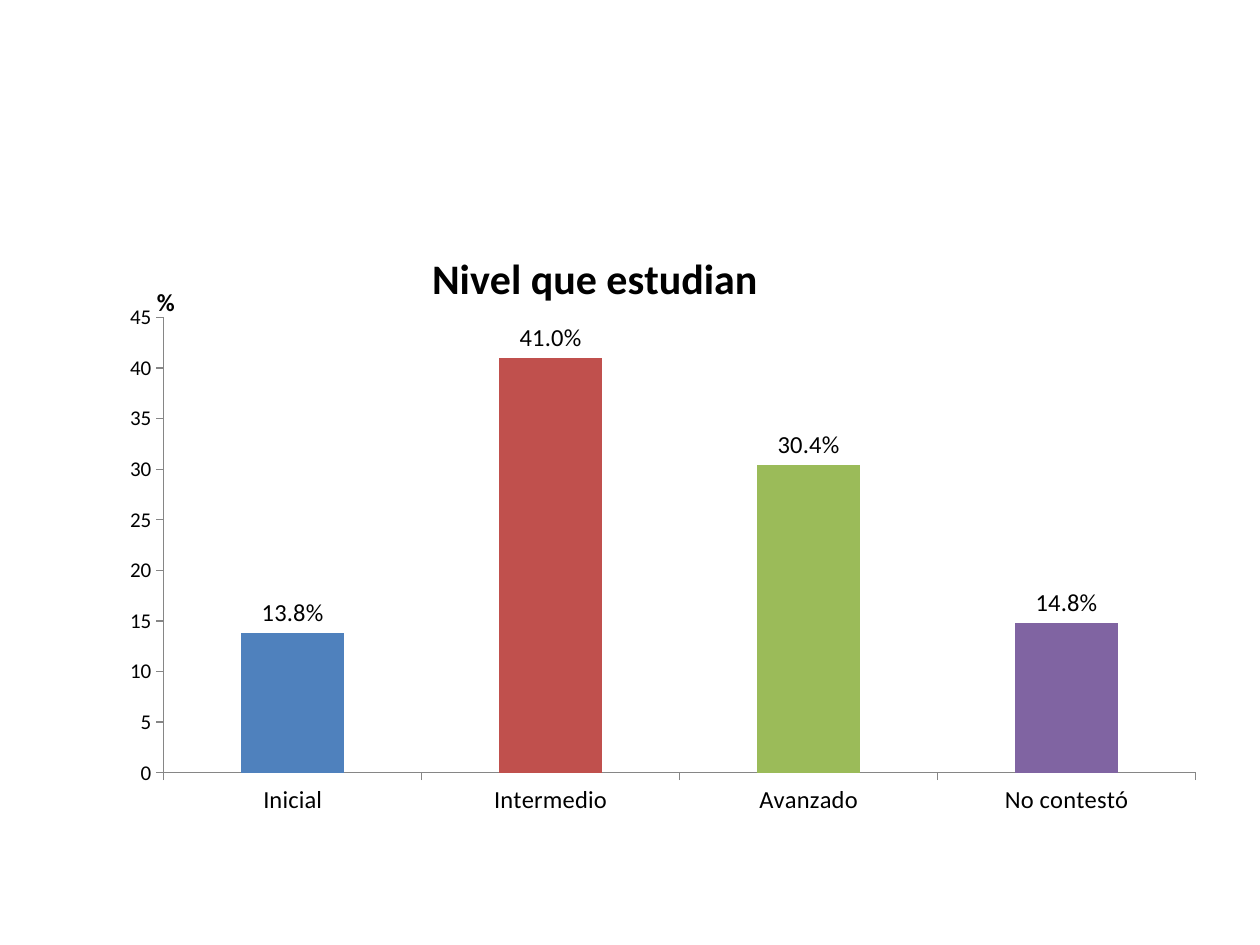
from lxml import etree
from pptx import Presentation
from pptx.chart.data import CategoryChartData
from pptx.dml.color import RGBColor
from pptx.enum.chart import XL_CHART_TYPE, XL_LABEL_POSITION, XL_TICK_MARK
from pptx.oxml.ns import qn
from pptx.util import Inches, Pt

COLUMN = XL_CHART_TYPE.COLUMN_CLUSTERED
OUTSIDE_END = XL_LABEL_POSITION.OUTSIDE_END
TICK_OUT = XL_TICK_MARK.OUTSIDE
TICK_NONE = XL_TICK_MARK.NONE

LEVELS = {
    "Inicial": (13.8, "4F81BD"),
    "Intermedio": (41.0, "C0504D"),
    "Avanzado": (30.4, "9BBB59"),
    "No contestó": (14.8, "8064A2"),
}


def rgb(value):
    return RGBColor.from_string(value)


def set_layout(parent, index, **values):
    for old in parent.findall(qn("c:layout")):
        parent.remove(old)
    layout = etree.Element(qn("c:layout"))
    manual = etree.SubElement(layout, qn("c:manualLayout"))
    for tag, value in values.items():
        etree.SubElement(manual, qn(f"c:{tag}")).set("val", str(value))
    parent.insert(index, layout)


class Deck:
    font = "Calibri"
    ink = "000000"
    axis_line = "868686"

    def __init__(self, width, height):
        self.prs = Presentation()
        self.prs.slide_width = Inches(width)
        self.prs.slide_height = Inches(height)
        self.s = self.prs.slides.add_slide(self.prs.slide_layouts[6])

    def style(self, font, size, bold=False):
        values = {"name": self.font, "size": Pt(size), "bold": bold}
        for name, value in values.items():
            setattr(font, name, value)
        font.color.rgb = rgb(self.ink)

    def title(self, holder, text, size, x, y):
        tf = holder.text_frame
        tf.text = text
        self.style(tf.paragraphs[0].runs[0].font, size, True)
        tf._txBody.bodyPr.set("rot", "0")
        set_layout(holder._element, 1, xMode="edge", yMode="edge", x=x, y=y)

    def axis(self, axis, size, **values):
        defaults = {"has_major_gridlines": False, "major_tick_mark": TICK_OUT,
                    "minor_tick_mark": TICK_NONE}
        for name, value in {**defaults, **values}.items():
            setattr(axis, name, value)
        self.style(axis.tick_labels.font, size)
        axis.format.line.color.rgb = rgb(self.axis_line)
        axis.format.line.width = Pt(0.75)

    def column_chart(self, levels, left, top, width, height):
        data = CategoryChartData(number_format="0.0")
        data.categories = list(levels)
        data.add_series("Series 1", [value for value, _ in levels.values()])
        w, h = self.prs.slide_width, self.prs.slide_height
        box = [int(v) for v in (left * w, top * h, width * w, height * h)]
        chart = self.s.shapes.add_chart(COLUMN, *box, data).chart
        chart.has_legend = False
        self.style(chart.font, 10)
        plot = chart.plots[0]
        plot.gap_width = 150
        plot.vary_by_categories = False
        set_layout(plot._element.getparent(), 0, layoutTarget="inner",
                   xMode="edge", yMode="edge", x=0.08, y=0.15, w=0.91, h=0.73)
        for i, (_, color) in enumerate(levels.values()):
            fill = plot.series[0].points[i].format.fill
            fill.solid()
            fill.fore_color.rgb = rgb(color)
        plot.has_data_labels = True
        labels = plot.data_labels
        values = {"show_value": True, "number_format": '0.0"%"',
                  "number_format_is_linked": False, "position": OUTSIDE_END}
        for name, value in values.items():
            setattr(labels, name, value)
        self.style(labels.font, 14)
        return chart


def main():
    deck = Deck(10, 7.5)
    chart = deck.column_chart(LEVELS, 0.058, 0.237, 0.9, 0.66)
    deck.axis(chart.category_axis, 14)
    deck.axis(chart.value_axis, 12, minimum_scale=0, maximum_scale=45, major_unit=5)
    chart.value_axis.tick_labels.number_format = "0"
    chart.value_axis.tick_labels.number_format_is_linked = False
    deck.title(chart.chart_title, "Nivel que estudian", 24, 0.31, 0.03)
    deck.title(chart.value_axis.axis_title, "%", 14, 0.07, 0.09)
    deck.prs.save("out.pptx")


if __name__ == "__main__":
    main()
